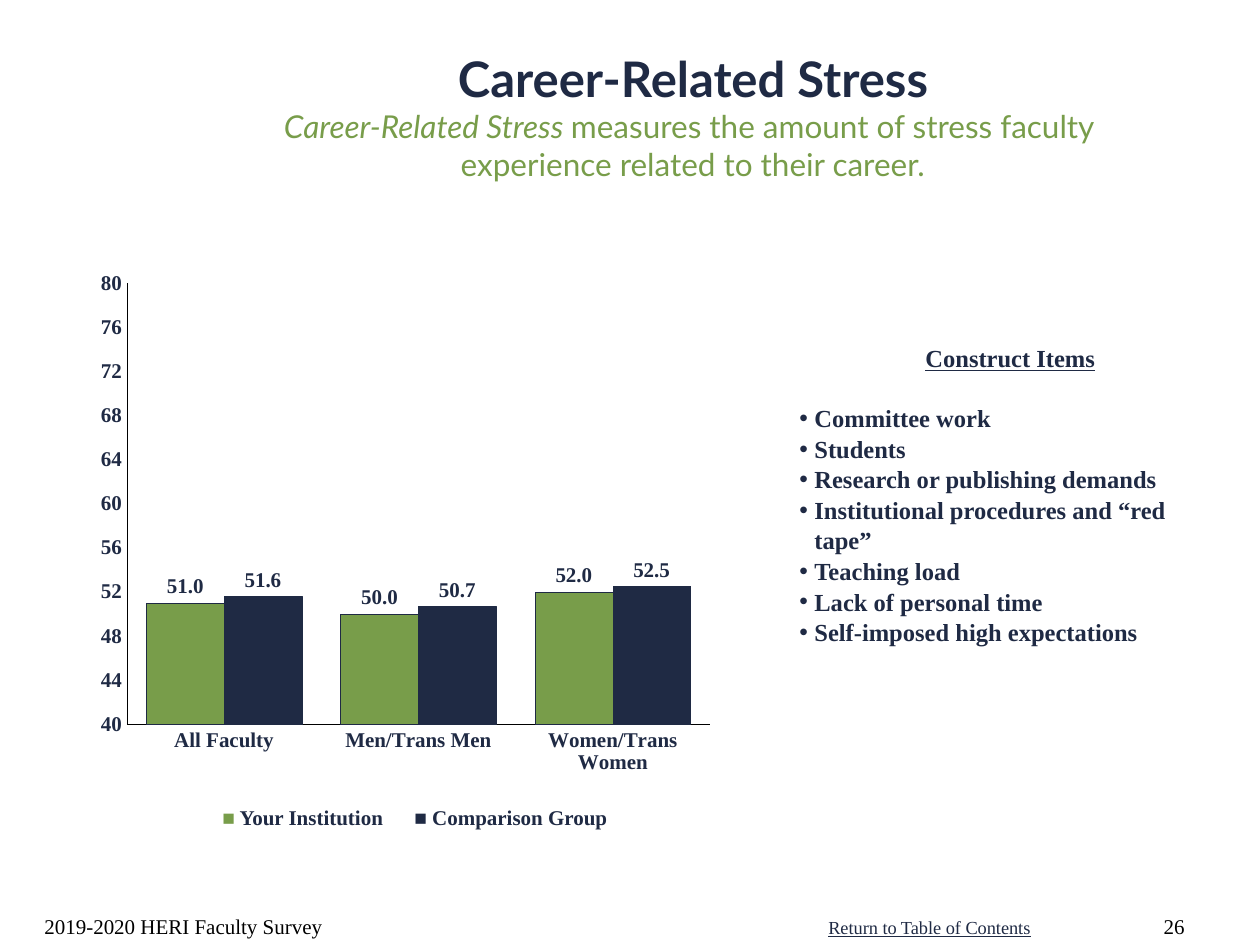
import pptx
import pptx.chart.data
import pptx.dml.color
import pptx.enum.chart
import pptx.enum.text
import pptx.oxml.ns
import pptx.util
from lxml import etree

PX = 914400 // 126
NAVY, GREEN, BLACK = "1F2A44", "789D4A", "000000"
SERIF, SANS = "Times New Roman", "Lato"
ALIGN = pptx.enum.text.PP_ALIGN
ANCHOR = pptx.enum.text.MSO_ANCHOR

GROUPS = ["All Faculty", "Men/Trans Men", "Women/Trans Women"]
SCORES = [
    ("Your Institution", GREEN, [51.0, 50.0, 52.0]),
    ("Comparison Group", NAVY, [51.6, 50.7, 52.5]),
]
CONSTRUCT_ITEMS = [
    "Committee work",
    "Students",
    "Research or publishing demands",
    "Institutional procedures and “red tape”",
    "Teaching load",
    "Lack of personal time",
    "Self-imposed high expectations",
]


def px(length):
    return pptx.util.Emu(length * PX)


def rgb(value):
    return pptx.dml.color.RGBColor.from_string(value)


def style_font(font, size, color, name=SERIF, **formats):
    font.size = pptx.util.Pt(size)
    font.name = name
    font.color.rgb = rgb(color)
    for key, value in formats.items():
        setattr(font, key, value)


def add_run(paragraph, text, size, color, **formats):
    run = paragraph.add_run()
    run.text = text
    style_font(run.font, size, color, **formats)


def add_text_frame(slide, box, anchor=ANCHOR.TOP, wrap=True):
    frame = slide.shapes.add_textbox(*map(px, box)).text_frame
    frame.word_wrap = wrap
    frame.vertical_anchor = anchor
    return frame


def add_line(slide, box, text, size, color, align=ALIGN.LEFT,
             anchor=ANCHOR.BOTTOM, wrap=True, **formats):
    """Add a text box that holds one line in one format."""
    paragraph = add_text_frame(slide, box, anchor, wrap).paragraphs[0]
    paragraph.alignment = align
    add_run(paragraph, text, size, color, **formats)


def add_child(parent, tag, **attributes):
    child = etree.SubElement(parent, pptx.oxml.ns.qn(tag))
    for key, value in attributes.items():
        child.set(key, str(value))
    return child


def add_heading(slide):
    heading = add_text_frame(slide, (126, 21, 1134, 189), ANCHOR.MIDDLE).paragraphs[0]
    heading.alignment = ALIGN.CENTER
    add_run(heading, "Career-Related Stress", 28, NAVY, name=SANS, bold=True)
    heading.add_line_break()
    add_run(heading, "Career-Related Stress ", 18, GREEN, name=SANS, italic=True)
    add_run(heading, "measures the amount of stress faculty ", 18, GREEN, name=SANS)
    heading.add_line_break()
    add_run(heading, "experience related to their career.", 18, GREEN, name=SANS)


def set_plot_area(chart, **fractions):
    """Fix the inner plot area as fractions of the chart."""
    plot_area = chart.plots[0]._element.getparent()
    for old in plot_area.findall(pptx.oxml.ns.qn("c:layout")):
        plot_area.remove(old)
    layout = etree.Element(pptx.oxml.ns.qn("c:layout"))
    plot_area.insert(0, layout)
    manual = add_child(layout, "c:manualLayout")
    add_child(manual, "c:layoutTarget", val="inner")
    for key in ("xMode", "yMode"):
        add_child(manual, f"c:{key}", val="edge")
    for key, value in fractions.items():
        add_child(manual, f"c:{key}", val=value)


def style_axis(axis):
    tick = pptx.enum.chart.XL_TICK_MARK.NONE
    for key in ("major_tick_mark", "minor_tick_mark"):
        setattr(axis, key, tick)
    axis.has_major_gridlines = False
    axis.format.line.color.rgb = rgb(BLACK)
    axis.format.line.width = pptx.util.Pt(0.27)


def add_score_chart(slide):
    data = pptx.chart.data.CategoryChartData(number_format="#,##0.0")
    data.categories = GROUPS
    for name, _, values in SCORES:
        data.add_series(name, values)
    chart = slide.shapes.add_chart(
        pptx.enum.chart.XL_CHART_TYPE.COLUMN_CLUSTERED,
        *map(px, (0, 220, 819, 567)), data).chart
    chart.has_legend = False
    chart.has_title = False
    style_font(chart.font, 12, NAVY, bold=True)
    set_plot_area(chart, x=0.155, y=0.112, w=0.712, h=0.777)

    for axis in (chart.category_axis, chart.value_axis):
        style_axis(axis)
    scale = {"minimum_scale": 40, "maximum_scale": 80, "major_unit": 4}
    for key, value in scale.items():
        setattr(chart.value_axis, key, value)
    chart.value_axis.tick_labels.number_format = "#,##0"
    chart.value_axis.tick_labels.number_format_is_linked = False

    columns = chart.plots[0]
    columns.gap_width = 50
    columns.overlap = 0
    columns.vary_by_categories = False
    for series, (_, color, _) in zip(columns.series, SCORES):
        series.format.fill.solid()
        series.format.fill.fore_color.rgb = rgb(color)
        series.format.line.color.rgb = rgb(NAVY)
        series.format.line.width = pptx.util.Pt(0.25)
        labels = series.data_labels
        label_formats = {
            "show_value": True,
            "number_format": "#,##0.0",
            "number_format_is_linked": False,
            "position": pptx.enum.chart.XL_LABEL_POSITION.OUTSIDE_END,
        }
        for key, value in label_formats.items():
            setattr(labels, key, value)


def add_legend(slide):
    legend = add_text_frame(slide, (210, 798, 441, 38)).paragraphs[0]
    tabs = add_child(legend._p.get_or_add_pPr(), "a:tabLst")
    add_child(tabs, "a:tab", pos=px(192), algn="l")
    for index, (name, color, _) in enumerate(SCORES):
        marker = "\t■" if index else "■"
        add_run(legend, marker, 12, color, bold=True)
        add_run(legend, f" {name}", 12, NAVY, bold=True)


def add_construct_items(slide):
    frame = add_text_frame(slide, (787, 336, 410, 431))
    heading = frame.paragraphs[0]
    heading._p.get_or_add_pPr().set("marL", str(px(126)))
    heading.space_after = pptx.util.Pt(16.8)
    add_run(heading, "Construct Items", 14, NAVY, bold=True, underline=True)
    for item in CONSTRUCT_ITEMS:
        paragraph = frame.add_paragraph()
        properties = paragraph._p.get_or_add_pPr()
        properties.set("marL", str(px(15)))
        properties.set("indent", str(px(-15)))
        add_child(properties, "a:buFont", typeface="Arial")
        add_child(properties, "a:buChar", char="•")
        add_run(paragraph, item, 14, NAVY, bold=True)
    for paragraph in frame.paragraphs:
        paragraph.line_spacing = 1.04


def main():
    presentation = pptx.Presentation()
    presentation.slide_width, presentation.slide_height = px(1260), px(945)
    slide = presentation.slides.add_slide(presentation.slide_layouts[6])
    add_heading(slide)
    add_score_chart(slide)
    add_legend(slide)
    add_construct_items(slide)
    add_line(slide, (32, 882, 399, 63), "2019-2020 HERI Faculty Survey", 12, BLACK)
    add_line(slide, (816, 910, 229, 35), "Return to Table of Contents", 10.5, NAVY,
             anchor=ANCHOR.TOP, wrap=False, underline=True)
    add_line(slide, (1134, 882, 63, 63), "26", 12, BLACK, align=ALIGN.RIGHT)
    presentation.save("out.pptx")


if __name__ == "__main__":
    main()
